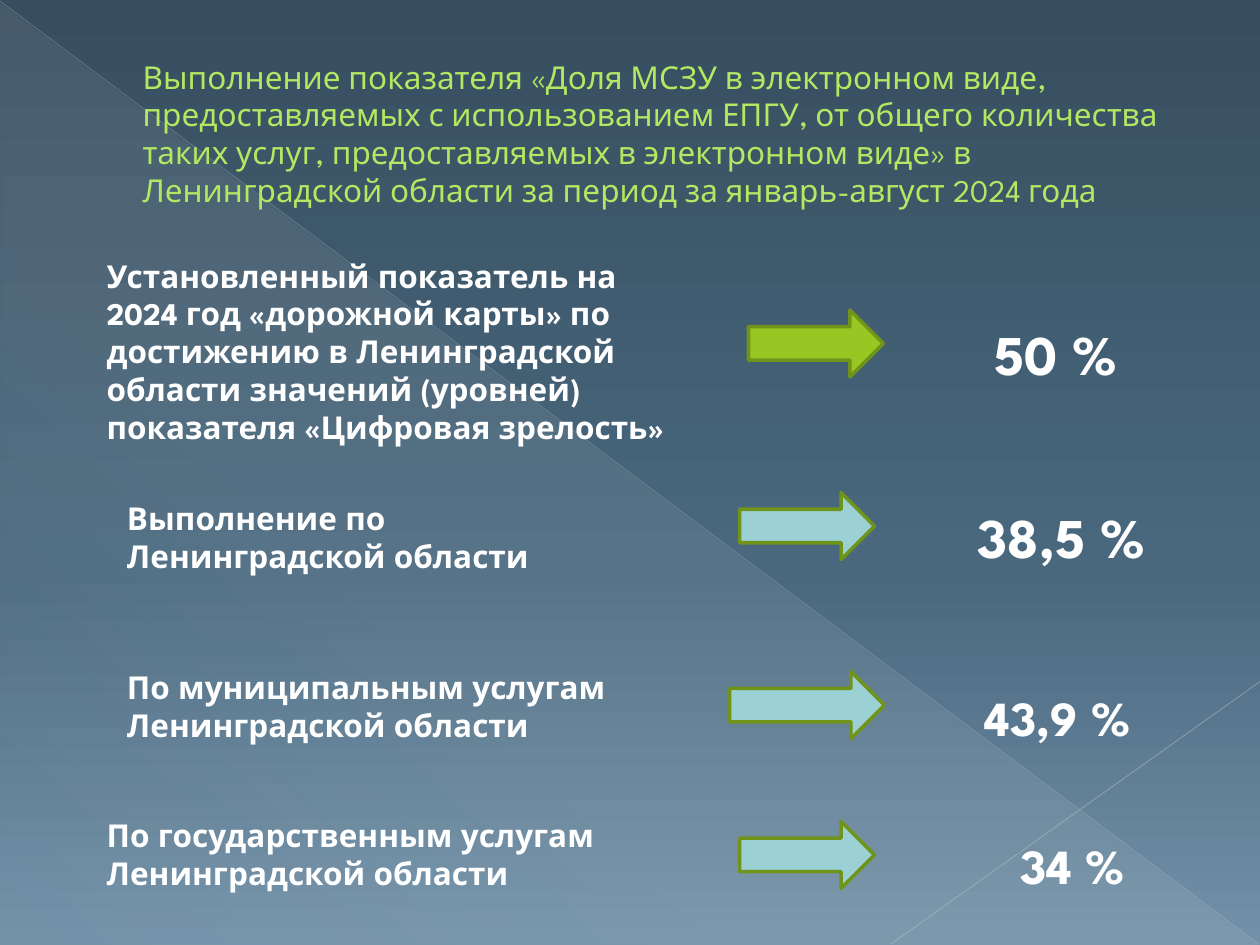
import lxml.etree
import pptx
import pptx.dml.color
import pptx.enum.shapes
import pptx.enum.text
import pptx.oxml.ns
import pptx.util

Cm = pptx.util.Cm
Pt = pptx.util.Pt
RGB = pptx.dml.color.RGBColor.from_string
ALIGN = pptx.enum.text.PP_ALIGN
ANCHOR = pptx.enum.text.MSO_ANCHOR
SHAPE = pptx.enum.shapes.MSO_SHAPE
qn = pptx.oxml.ns.qn

FONT = "League Spartan"
COLORS = {
    "title": "B4E862",
    "title_outline": "698A18",
    "text": "FFFFFF",
    "target_arrow": "98C723",
    "result_arrow": "9BD0D5",
    "arrow_line": "70931A",
    "sky_top": "374E5F",
    "sky_middle": "49687E",
    "sky_bottom": "7291A8",
    "glow": "E7ECED",
    "long_ray": "BAC0C6",
    "short_ray": "C2C7CC",
}


def write_text(frame, text, size=18, color="text", bold=True, align=ALIGN.LEFT, anchor=ANCHOR.TOP):
    frame.word_wrap = True
    frame.auto_size = pptx.enum.text.MSO_AUTO_SIZE.NONE
    frame.vertical_anchor = anchor
    paragraph = frame.paragraphs[0]
    paragraph.alignment = align
    run = paragraph.add_run()
    run.text = text
    run.font.name = FONT
    run.font.size = Pt(size)
    run.font.bold = bold
    run.font.color.rgb = RGB(COLORS[color])
    return run


def set_gradient(fill, owner, stops, angle):
    """Give the fill inside owner (position %, colour, opacity %) stops, with a clockwise angle."""
    fill.gradient()
    gradient = next(owner.iter(qn("a:gradFill")))
    stop_list = gradient.find(qn("a:gsLst"))
    for old_stop in list(stop_list):
        stop_list.remove(old_stop)
    for position, color, opacity in stops:
        stop = lxml.etree.SubElement(stop_list, qn("a:gs"), pos=str(position * 1000))
        shade = lxml.etree.SubElement(stop, qn("a:srgbClr"), val=COLORS[color])
        lxml.etree.SubElement(shade, qn("a:alpha"), val=str(opacity * 1000))
    direction = gradient.find(qn("a:lin"))
    direction.set("ang", str(angle * 60000))
    direction.set("scaled", "0")


deck = pptx.Presentation()
deck.slide_width = Cm(25.4)
deck.slide_height = Cm(19.05)
slide = deck.slides.add_slide(deck.slide_layouts[5])
shapes = slide.shapes

# Background
set_gradient(
    slide.background.fill,
    slide.element,
    [(0, "sky_top", 100), (60, "sky_middle", 100), (100, "sky_bottom", 100)],
    90,
)
glow = shapes.add_shape(SHAPE.RIGHT_TRIANGLE, Cm(0.02), Cm(0.05), Cm(25.36), Cm(19))
glow.shadow.inherit = False
glow.line.fill.background()
set_gradient(glow.fill, glow.element, [(0, "glow", 10), (70, "glow", 8), (100, "glow", 1)], 133)

rays = [
    ((0, 0.02, 25.38, 19.03), "long_ray", 0.39, 35),
    ((25.4, 13.74, 17.96, 19.03), "short_ray", 0.47, 45),
]
for ends, color, weight, opacity in rays:
    ray = shapes.add_connector(
        pptx.enum.shapes.MSO_CONNECTOR.STRAIGHT, *[Cm(coordinate) for coordinate in ends]
    )
    ray.line.color.rgb = RGB(COLORS[color])
    ray.line.width = Pt(weight)
    shade = next(ray.element.spPr.iter(qn("a:srgbClr")))
    lxml.etree.SubElement(shade, qn("a:alpha"), val=str(opacity * 1000))
    lxml.etree.SubElement(ray.element.spPr, qn("a:effectLst"))

# Title, brought in front of the background
title = shapes.title
shapes.element.append(title.element)
title.left, title.top, title.width, title.height = Cm(1.27), Cm(0.74), Cm(22.86), Cm(3.89)
heading = write_text(
    title.text_frame,
    "Выполнение показателя «Доля МСЗУ в электронном виде, предоставляемых "
    "с использованием ЕПГУ, от общего количества таких услуг, предоставляемых "
    "в электронном виде» в Ленинградской области за период за январь-август 2024 года",
    color="title",
    bold=False,
    anchor=ANCHOR.MIDDLE,
)
title.text_frame.paragraphs[0]._p.get_or_add_pPr().set("marL", str(Cm(1.35)))
outline = lxml.etree.Element(qn("a:ln"), w=str(Pt(0.5)))
outline_fill = lxml.etree.SubElement(outline, qn("a:solidFill"))
lxml.etree.SubElement(outline_fill, qn("a:srgbClr"), val=COLORS["title_outline"])
heading.font._element.insert(0, outline)

# Indicators: label and box, arrow (left, top, width) and colour, value, box and size
indicators = [
    (
        "Установленный показатель на 2024 год «дорожной карты» по достижению "
        "в Ленинградской области значений (уровней) показателя «Цифровая зрелость»",
        (1.9, 5.05, 11.99, 4.11),
        (15.09, 6.25, 2.72), "target_arrow",
        "50 %", (19.1, 6.32, 4.39, 1.63), 32,
    ),
    (
        "Выполнение по Ленинградской области",
        (2.31, 9.93, 10.8, 1.8),
        (14.91, 9.93, 2.72), "result_arrow",
        "38,5 %", (19.3, 10.01, 4.19, 1.63), 32,
    ),
    (
        "По муниципальным услугам Ленинградской области",
        (2.31, 13.34, 10.8, 1.8),
        (14.71, 13.54, 3.12), "result_arrow",
        "43,9 %", (19.51, 13.74, 3.61, 1.45), 28,
    ),
    (
        "По государственным услугам Ленинградской области",
        (1.9, 16.33, 11, 1.8),
        (14.91, 16.56, 2.72), "result_arrow",
        "34 %", (19.71, 16.71, 3.81, 1.45), 28,
    ),
]
ARROW_HEIGHT = 1.35
for label, label_box, arrow_place, arrow_color, value, value_box, value_size in indicators:
    label_area = shapes.add_textbox(*[Cm(length) for length in label_box])
    write_text(label_area.text_frame, label)

    arrow = shapes.add_shape(
        SHAPE.RIGHT_ARROW, *[Cm(length) for length in (*arrow_place, ARROW_HEIGHT)]
    )
    arrow.shadow.inherit = False
    arrow.fill.solid()
    arrow.fill.fore_color.rgb = RGB(COLORS[arrow_color])
    arrow.line.color.rgb = RGB(COLORS["arrow_line"])
    arrow.line.width = Pt(2)

    value_area = shapes.add_textbox(*[Cm(length) for length in value_box])
    write_text(value_area.text_frame, value, size=value_size, align=ALIGN.CENTER)

deck.save("out.pptx")
